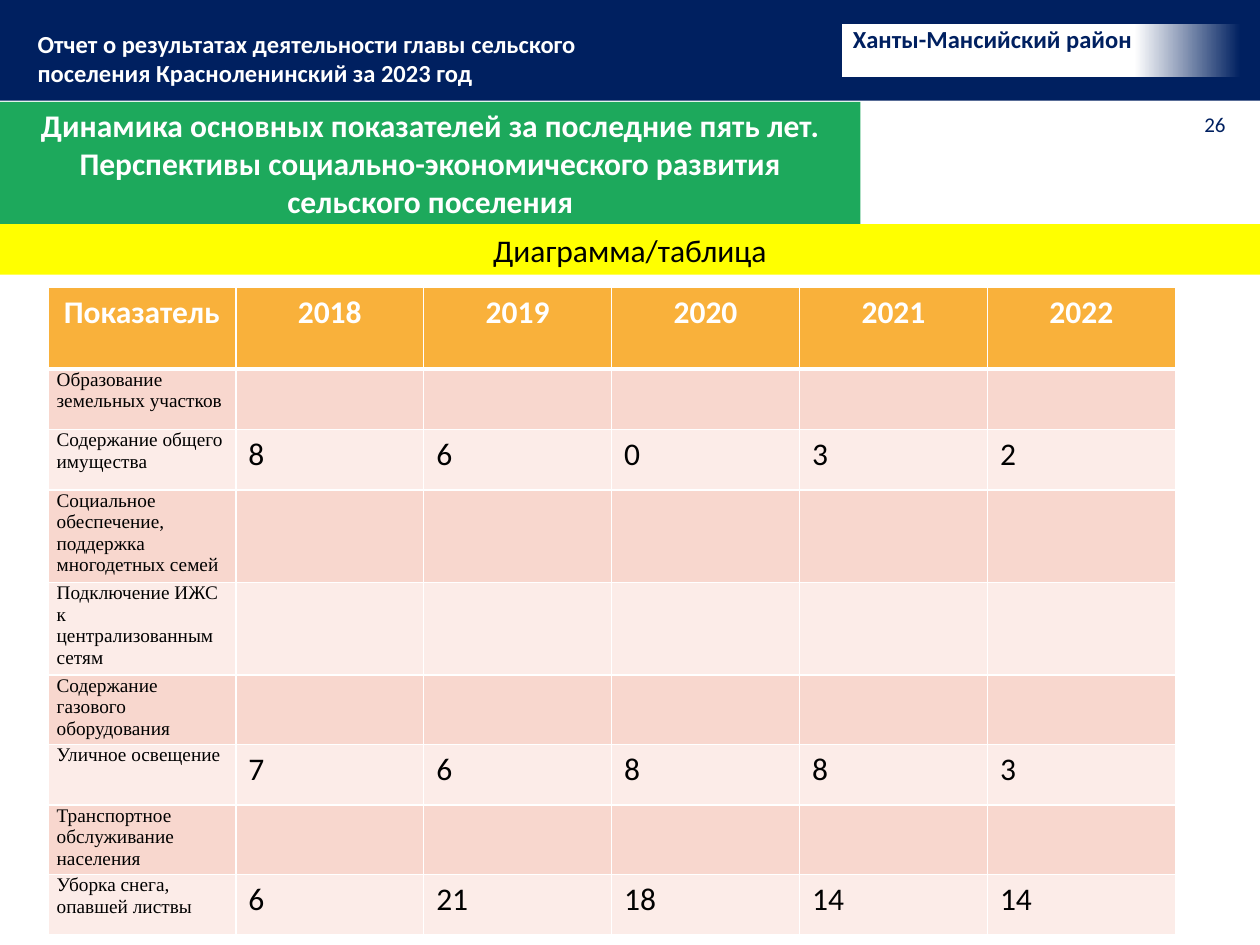
from lxml.etree import SubElement
from pptx import Presentation
from pptx.dml.color import RGBColor
from pptx.enum.shapes import MSO_SHAPE
from pptx.enum.text import MSO_ANCHOR as ANCHOR, PP_ALIGN as ALIGN
from pptx.oxml.ns import qn
from pptx.util import Inches, Pt

NAVY = RGBColor(0x00, 0x20, 0x60)
WHITE = RGBColor(0xFF, 0xFF, 0xFF)
BLACK = RGBColor(0x00, 0x00, 0x00)
GREEN = RGBColor(0x1D, 0xA9, 0x5C)
YELLOW = RGBColor(0xFF, 0xFF, 0x00)
ORANGE = RGBColor(0xF9, 0xB1, 0x3B)
BANDS = (RGBColor(0xF8, 0xD7, 0xCE), RGBColor(0xFC, 0xEC, 0xE8))

REPORT = "Отчет о результатах деятельности главы сельского поселения Красноленинский за 2023 год"
TITLE = ("Динамика основных показателей за последние пять лет. "
         "Перспективы социально-экономического развития сельского поселения")
HEADINGS = ["Показатель", "2018", "2019", "2020", "2021", "2022"]
INDICATORS = [
    ("Образование земельных участков", []),
    ("Содержание общего имущества", [8, 6, 0, 3, 2]),
    ("Социальное обеспечение, поддержка многодетных семей", []),
    ("Подключение ИЖС к централизованным сетям", []),
    ("Содержание газового оборудования", []),
    ("Уличное освещение", [7, 6, 8, 8, 3]),
    ("Транспортное обслуживание населения", []),
    ("Уборка снега, опавшей листвы", [6, 21, 18, 14, 14]),
]


def write(frame, text, size=18, color=BLACK, bold=False, font="Calibri", align=ALIGN.LEFT):
    """Put one formatted paragraph into a text frame."""
    frame.word_wrap = True
    paragraph = frame.paragraphs[0]
    paragraph.alignment = align
    run = paragraph.add_run()
    run.text = text
    run.font.size = Pt(size)
    run.font.name = font
    run.font.bold = bold
    run.font.color.rgb = color


def add_band(slide, left, top, width, height, fill=None):
    """Add a borderless rectangle, filled when a colour is given."""
    band = slide.shapes.add_shape(MSO_SHAPE.RECTANGLE, Inches(left), Inches(top),
                                  Inches(width), Inches(height))
    band.shadow.inherit = False
    band.line.fill.background()
    if fill is not None:
        band.fill.solid()
        band.fill.fore_color.rgb = fill
    return band


def add_label(slide, left, top, width, height, text, **style):
    """Add a text box with one paragraph."""
    label = slide.shapes.add_textbox(Inches(left), Inches(top), Inches(width), Inches(height))
    write(label.text_frame, text, **style)


def add_district(slide, left, top, width, height):
    """Add the district plate that fades into the header."""
    plate = add_band(slide, left, top, width, height)
    plate.fill.gradient()
    plate.fill.gradient_angle = 180
    for stop, position, color in zip(plate.fill.gradient_stops, (0.02, 0.28), (NAVY, WHITE)):
        stop.position = position
        stop.color.rgb = color
    frame = plate.text_frame
    frame.vertical_anchor = ANCHOR.TOP
    frame.margin_left = frame.margin_right = Inches(0.09)
    frame.margin_top = frame.margin_bottom = 0
    write(frame, "Ханты-Мансийский район", size=14, color=NAVY, bold=True)


def add_header(slide, left, top, width, height):
    """Add the navy header with the report name, district and page number."""
    add_band(slide, left, top, width, height, NAVY)
    add_district(slide, left + 6.68, top + 0.19, 3.23, 0.42)
    add_label(slide, left + 0.2, top + 0.18, 4.67, 0.57, REPORT, size=14, color=WHITE, bold=True)
    add_label(slide, left + 9.46, top + height + 0.04, 0.48, 0.3, "26", size=12, color=NAVY)


def add_heading(slide, left, top, width, height, fill, text, **style):
    """Add a coloured band with a centred heading."""
    frame = add_band(slide, left, top, width, height, fill).text_frame
    frame.vertical_anchor = ANCHOR.MIDDLE
    write(frame, text, align=ALIGN.CENTER, **style)


def format_cell(cell, fill, bottom=1):
    """Give a cell white borders and a solid fill."""
    properties = cell._tc.get_or_add_tcPr()
    for side, points in (("L", 1), ("R", 1), ("T", 1), ("B", bottom)):
        border = SubElement(properties, qn(f"a:ln{side}"), w=str(Pt(points)))
        SubElement(SubElement(border, qn("a:solidFill")), qn("a:srgbClr"), val=str(WHITE))
    cell.fill.solid()
    cell.fill.fore_color.rgb = fill


def add_indicators(slide, left, top, width, header_height, row_height):
    """Add the table of indicators by year."""
    row_count, column_count = len(INDICATORS) + 1, len(HEADINGS)
    table = slide.shapes.add_table(
        row_count, column_count, Inches(left), Inches(top), Inches(width),
        Inches(header_height + row_height * len(INDICATORS))).table
    table.horz_banding = False
    for column in table.columns:
        column.width = Inches(width / column_count)
    for index, row in enumerate(table.rows):
        row.height = Inches(row_height if index else header_height)

    for column, heading in enumerate(HEADINGS):
        cell = table.cell(0, column)
        format_cell(cell, ORANGE, bottom=3)
        write(cell.text_frame, heading, color=WHITE, bold=True, align=ALIGN.CENTER)

    for row, (indicator, values) in enumerate(INDICATORS, start=1):
        for column in range(column_count):
            format_cell(table.cell(row, column), BANDS[(row - 1) % 2])
        name = table.cell(row, 0)
        name.margin_left = name.margin_right = Inches(0.07)
        name.margin_top = name.margin_bottom = 0
        write(name.text_frame, indicator, size=11, font="Times New Roman")
        for column, value in enumerate(values, start=1):
            write(table.cell(row, column).text_frame, str(value))


def main():
    """Build the slide and save it."""
    deck = Presentation()
    deck.slide_width, deck.slide_height = Inches(10), Inches(7.5)
    slide = deck.slides.add_slide(deck.slide_layouts[6])
    add_header(slide, 0, 0, 10, 0.8)
    add_heading(slide, 0, 0.81, 6.83, 0.97, GREEN, TITLE, color=WHITE, bold=True)
    add_indicators(slide, 0.38, 2.28, 8.95, 0.65, 0.48)
    add_heading(slide, 0, 1.78, 10, 0.4, YELLOW, "Диаграмма/таблица")
    deck.save("out.pptx")


if __name__ == "__main__":
    main()
